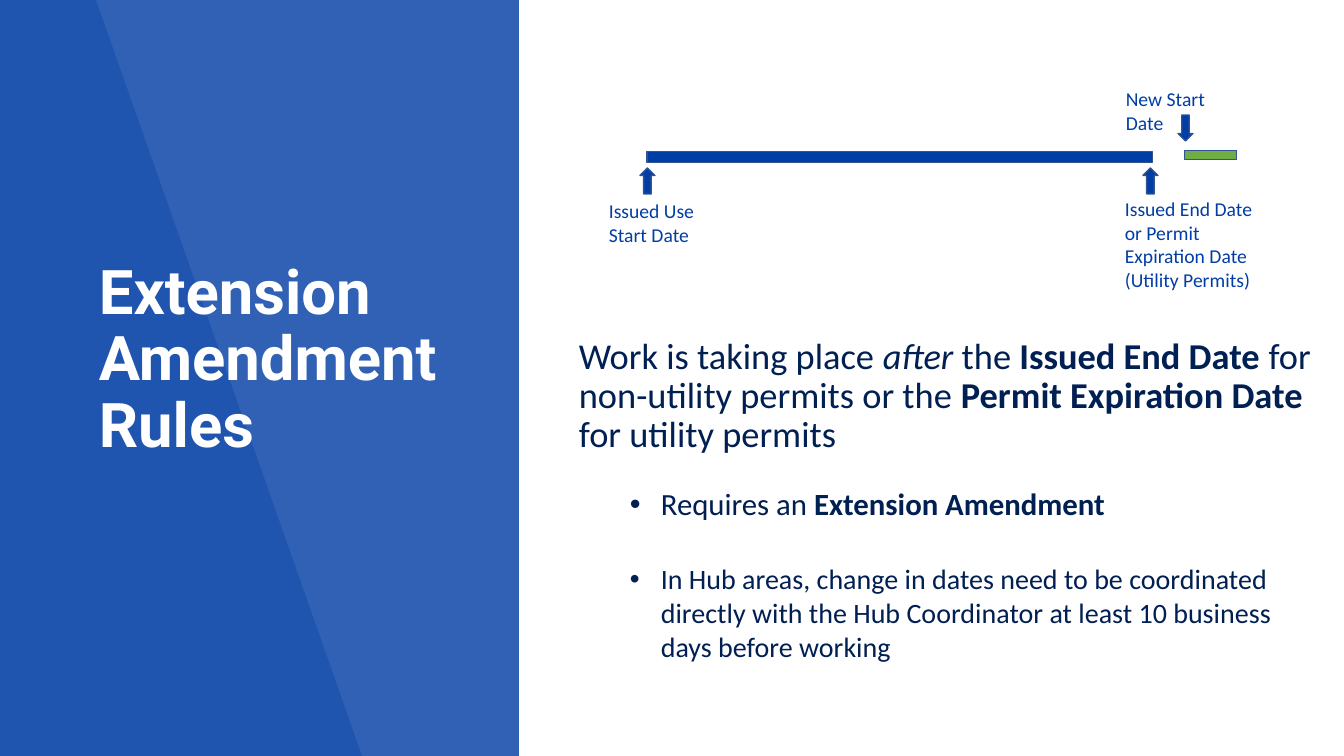
from lxml import etree
from pptx import Presentation
from pptx.dml.color import RGBColor
from pptx.enum.shapes import MSO_SHAPE as Preset
from pptx.enum.text import MSO_ANCHOR as Anchor
from pptx.oxml.ns import qn
from pptx.util import Emu, Pt

EMU_PER_PX = 914400 / 100.8
WIDTH, HEIGHT = 1344, 756

BLUE, NAVY, OUTLINE, GREEN, WHITE = "003DA5", "001F52", "31538F", "70AD47", "FFFFFF"

TITLE = "Extension Amendment Rules"
TITLE_BOX = (89, 71, 362, 580)
PANEL_BOX = (0, 0, 519, HEIGHT)
WEDGE = [(0, 0), (96, 0), (362, HEIGHT), (0, HEIGHT)]

# Timeline: preset, box, fill, rotation
TIMELINE = [
    (Preset.MATH_MINUS, (556, 134, 688, 46), BLUE, 0),
    (Preset.UP_ARROW, (640, 168, 15, 26), BLUE, 0),
    (Preset.UP_ARROW, (1143, 168, 15, 26), BLUE, 0),
    (Preset.MATH_MINUS, (1175, 136, 71, 38), GREEN, 0),
    (Preset.UP_ARROW, (1178, 115, 15, 26), BLUE, 180),
]
LABELS = [
    ("Issued Use Start Date", (599, 194, 125, 57)),
    ("Issued End Date or Permit Expiration Date (Utility Permits)", (1115, 192, 161, 105)),
    ("New Start Date", (1116, 82, 125, 57)),
]

# Body paragraphs: runs of (text, style), size, line spacing, space before, bulleted
BODY_BOX = (569, 333, 759, 354)
BODY = [
    ([("Work is taking place ", ""), ("after", "italic"), (" the ", ""),
      ("Issued End Date ", "bold"), ("for non-utility permits or the ", ""),
      ("Permit Expiration Date", "bold"), (" for utility permits", "")], 26, 0.9, 0, False),
    ([("Requires an ", ""), ("Extension Amendment", "bold")], 22, 0.9, 24, True),
    ([("In Hub areas, change in dates need to be coordinated directly with the Hub "
       "Coordinator at least 10 business days before working", "")], 20, 1.0, 28, True),
]
BULLET_LEFT, BULLET_HANG = 82, 31


def px(value):
    return Emu(round(value * EMU_PER_PX))


def color(hex_string):
    return RGBColor.from_string(hex_string)


def paint(shape, fill, opacity=100, outline=None):
    shape.shadow.inherit = False
    shape.fill.solid()
    shape.fill.fore_color.rgb = color(fill)
    if opacity < 100:
        fill_color = shape._element.spPr.find(qn("a:solidFill"))[0]
        etree.SubElement(fill_color, qn("a:alpha"), val=str(opacity * 1000))
    if outline:
        shape.line.color.rgb = color(outline)
        shape.line.width = Pt(1)
    else:
        shape.line.fill.background()


def add_preset(preset, box):
    return slide.shapes.add_shape(preset, *map(px, box))


def add_text_frame(box):
    text_frame = slide.shapes.add_textbox(*map(px, box)).text_frame
    text_frame.word_wrap = True
    return text_frame


def style_font(font, name, size, hex_string, bold=False, italic=False):
    font.name, font.size = name, Pt(size)
    font.bold, font.italic = bold, italic
    font.color.rgb = color(hex_string)


def add_bullet(paragraph):
    properties = paragraph._p.get_or_add_pPr()
    properties.set("marL", str(px(BULLET_LEFT)))
    properties.set("indent", str(-px(BULLET_HANG)))
    etree.SubElement(properties, qn("a:buFont"), typeface="Arial")
    etree.SubElement(properties, qn("a:buChar"), char="•")


presentation = Presentation()
presentation.slide_width, presentation.slide_height = px(WIDTH), px(HEIGHT)
slide = presentation.slides.add_slide(presentation.slide_layouts[6])

# Title panel with its darker wedge
paint(add_preset(Preset.RECTANGLE, PANEL_BOX), BLUE, 81)
builder = slide.shapes.build_freeform(*WEDGE[0], scale=EMU_PER_PX)
builder.add_line_segments(WEDGE[1:], close=True)
paint(builder.convert_to_shape(), BLUE, 35)

title_frame = add_text_frame(TITLE_BOX)
title_frame.vertical_anchor = Anchor.MIDDLE
title_frame.text = TITLE
title_frame.paragraphs[0].line_spacing = 0.9
style_font(title_frame.paragraphs[0].runs[0].font, "Roboto", 44, WHITE, bold=True)

# Body text
body_frame = add_text_frame(BODY_BOX)
for index, (runs, size, spacing, before, bulleted) in enumerate(BODY):
    paragraph = body_frame.add_paragraph() if index else body_frame.paragraphs[0]
    paragraph.line_spacing = spacing
    if before:
        paragraph.space_before = Pt(before)
    if bulleted:
        paragraph.level = 1
        add_bullet(paragraph)
    for text, style in runs:
        run = paragraph.add_run()
        run.text = text
        style_font(run.font, "Calibri", size, NAVY, style == "bold", style == "italic")

# Timeline bars, arrows and labels
for preset, box, fill, rotation in TIMELINE:
    shape = add_preset(preset, box)
    shape.rotation = rotation
    paint(shape, fill, outline=OUTLINE)

for text, box in LABELS:
    label_frame = add_text_frame(box)
    label_frame.text = text
    style_font(label_frame.paragraphs[0].runs[0].font, "Calibri", 14, BLUE)

presentation.save("out.pptx")
